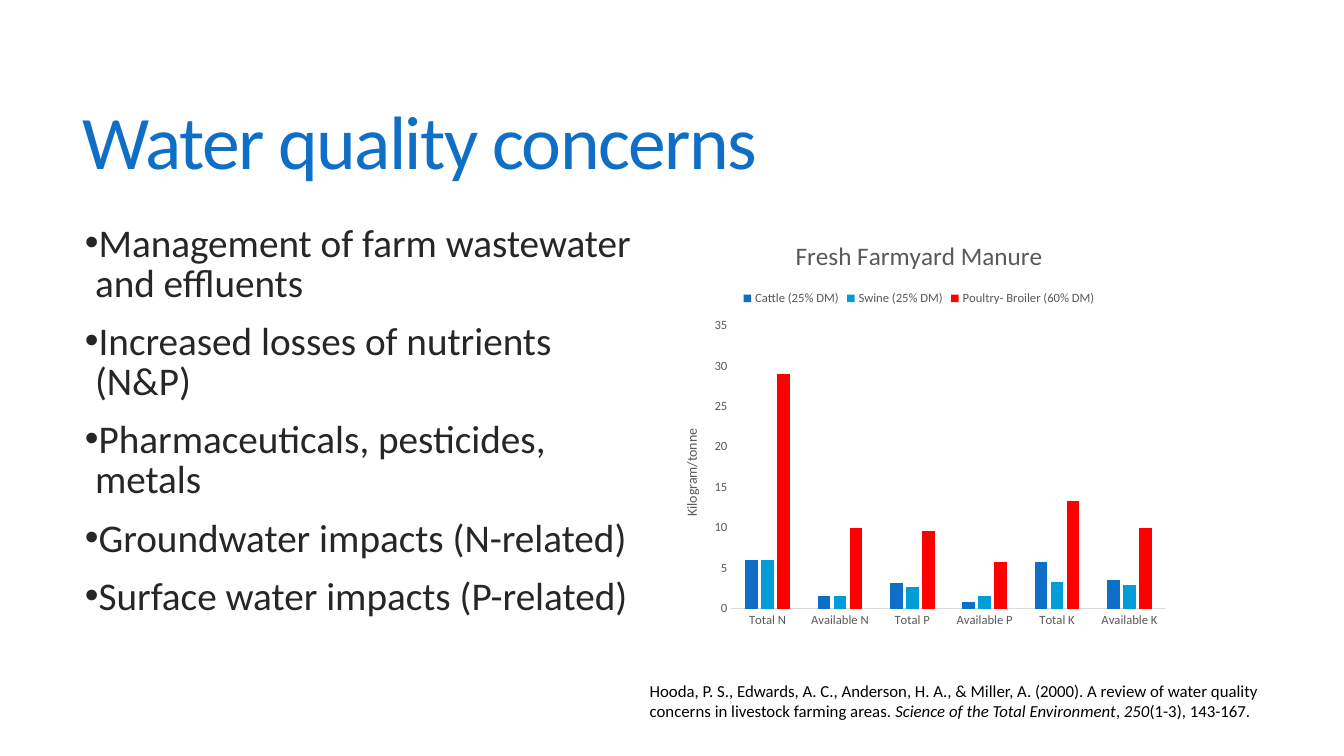
from pptx import Presentation
from pptx.chart.data import CategoryChartData
from pptx.dml.color import RGBColor
from pptx.enum import chart as ch, text
from pptx.oxml.xmlchemy import OxmlElement
from pptx.util import Pt

FONT = "Calibri"
BLUE = RGBColor(0x0F, 0x6F, 0xC6)
CYAN = RGBColor(0x00, 0x9D, 0xD9)
RED = RGBColor(0xFF, 0x00, 0x00)
DARK = RGBColor(0x26, 0x26, 0x26)
GREY = RGBColor(0x59, 0x59, 0x59)
RULE = RGBColor(0xD9, 0xD9, 0xD9)
BLACK = RGBColor(0x00, 0x00, 0x00)

CONCERNS = [
    "Management of farm wastewater and effluents",
    "Increased losses of nutrients (N&P)",
    "Pharmaceuticals, pesticides, metals",
    "Groundwater impacts (N-related)",
    "Surface water impacts (P-related)",
]
NUTRIENTS = ["Total N", "Available N", "Total P", "Available P", "Total K", "Available K"]
MANURE = [
    ("Cattle (25% DM)", [6, 1.5, 3.1, 0.8, 5.8, 3.5], BLUE),
    ("Swine (25% DM)", [6, 1.5, 2.6, 1.5, 3.3, 2.9], CYAN),
    ("Poultry- Broiler (60% DM)", [29, 10, 9.6, 5.7, 13.3, 9.9], RED),
]
CITATION = [
    ("Hooda, P. S., Edwards, A. C., Anderson, H. A., & Miller, A. (2000). A review of "
     "water quality concerns in livestock farming areas. ", False),
    ("Science of the Total Environment", True),
    (", ", False),
    ("250", True),
    ("(1-3), 143-167.", False),
]


def style_font(font, size, color):
    """Set the typeface, size and colour of a font."""
    font.name, font.size, font.bold = FONT, Pt(size), False
    font.color.rgb = color


def add_run(p, words, size, color, italic=False):
    """Append a formatted run to a paragraph."""
    r = p.add_run()
    r.text = words
    style_font(r.font, size, color)
    r.font.italic = italic
    return r


def place(sp, box):
    """Move a shape to a box of left, top, width and height in points."""
    sp.left, sp.top, sp.width, sp.height = map(Pt, box)


def build_title(s, box):
    """Fill the title placeholder."""
    sp = s.shapes.title
    place(sp, box)
    tf = sp.text_frame
    tf.auto_size = text.MSO_AUTO_SIZE.NONE
    tf.vertical_anchor = text.MSO_ANCHOR.MIDDLE
    p = tf.paragraphs[0]
    p.alignment = text.PP_ALIGN.LEFT
    p.line_spacing = 0.85
    r = add_run(p, "Water quality concerns", 54, BLUE)
    r.font._element.set("spc", "-120")


def build_concerns(s, box):
    """Fill the body placeholder with the bulleted concerns."""
    sp = s.placeholders[1]
    place(sp, box)
    tf = sp.text_frame
    tf.auto_size = text.MSO_AUTO_SIZE.NONE
    for i, concern in enumerate(CONCERNS):
        p = tf.add_paragraph() if i else tf.paragraphs[0]
        p.line_spacing = 0.85
        p.space_before = Pt(13 if i else 0)
        pPr = p._p.get_or_add_pPr()
        pPr.set("marL", str(Pt(7.2)))
        pPr.set("indent", str(Pt(-7.2)))
        bullet = OxmlElement("a:buChar")
        bullet.set("char", "•")
        pPr.append(bullet)
        add_run(p, concern, 28, DARK)


def build_chart(s, box):
    """Add the clustered columns of manure nutrients."""
    data = CategoryChartData()
    data.categories = NUTRIENTS
    for name, values, _ in MANURE:
        data.add_series(name, values)
    chart = s.shapes.add_chart(
        ch.XL_CHART_TYPE.COLUMN_CLUSTERED, *map(Pt, box), data).chart
    style_font(chart.font, 10, BLACK)

    chart.has_title = True
    add_run(chart.chart_title.text_frame.paragraphs[0], "Fresh Farmyard Manure", 18, GREY)
    chart.has_legend = True
    chart.legend.position = ch.XL_LEGEND_POSITION.TOP
    chart.legend.include_in_layout = False
    style_font(chart.legend.font, 9, GREY)

    plot = chart.plots[0]
    plot.gap_width, plot.overlap, plot.vary_by_categories = 219, -27, False
    for series, (_, _, color) in zip(plot.series, MANURE):
        series.invert_if_negative = False
        series.format.fill.solid()
        series.format.fill.fore_color.rgb = color

    for axis in (chart.category_axis, chart.value_axis):
        axis.has_major_gridlines = False
        axis.major_tick_mark = axis.minor_tick_mark = ch.XL_TICK_MARK.NONE
        style_font(axis.tick_labels.font, 9, GREY)
    line = chart.category_axis.format.line
    line.color.rgb, line.width = RULE, Pt(0.75)
    chart.value_axis.format.line.fill.background()
    p = chart.value_axis.axis_title.text_frame.paragraphs[0]
    add_run(p, "Kilogram/tonne", 10, GREY)


def build_citation(s, box):
    """Add the reference under the chart."""
    tf = s.shapes.add_textbox(*map(Pt, box)).text_frame
    tf.word_wrap = True
    tf.auto_size = text.MSO_AUTO_SIZE.SHAPE_TO_FIT_TEXT
    for words, italic in CITATION:
        add_run(tf.paragraphs[0], words, 12, BLACK, italic)


def main():
    """Build and save the slide."""
    prs = Presentation()
    prs.slide_width, prs.slide_height = Pt(960), Pt(540)
    s = prs.slides.add_slide(prs.slide_layouts[1])
    build_title(s, (52, 39.5, 848, 130.5))
    build_concerns(s, (53.5, 157.5, 419.5, 296.5))
    build_chart(s, (473, 157.5, 367, 296.5))
    build_citation(s, (457, 482.5, 480, 36))
    prs.save("out.pptx")


if __name__ == "__main__":
    main()
